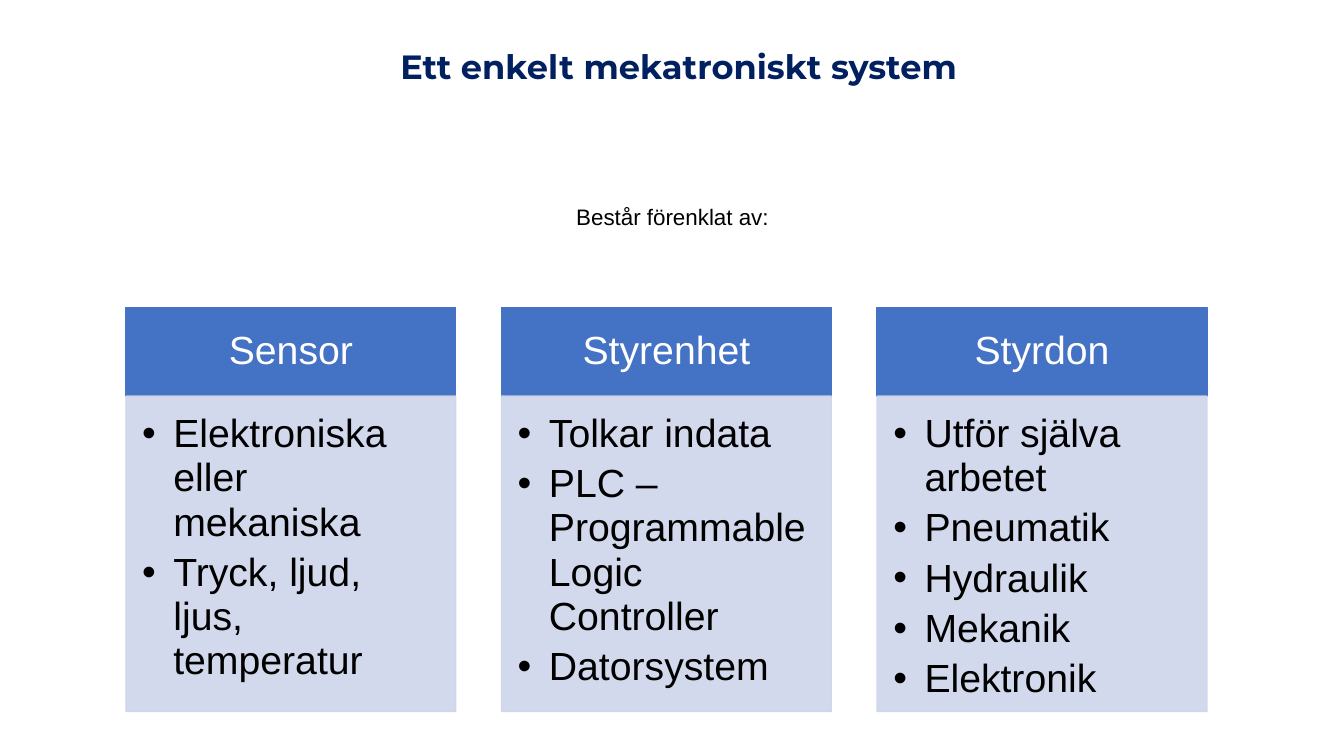
from dataclasses import dataclass

from lxml import etree
from pptx import Presentation
from pptx.dml.color import RGBColor
from pptx.enum.shapes import MSO_SHAPE
from pptx.enum.text import MSO_ANCHOR, MSO_AUTO_SIZE, PP_ALIGN
from pptx.oxml.ns import qn
from pptx.util import Inches, Pt

RECTANGLE = MSO_SHAPE.RECTANGLE
LEFT, CENTER = PP_ALIGN.LEFT, PP_ALIGN.CENTER
TOP, MIDDLE = MSO_ANCHOR.TOP, MSO_ANCHOR.MIDDLE
NO_AUTOFIT = MSO_AUTO_SIZE.NONE

COLORS = {
    "title": "002060",
    "header": "4472C4",
    "body": "CFD5EA",
    "light": "FFFFFF",
    "dark": "000000",
}

# Grid of the three parts, in inches
FIRST_COLUMN = 1.25
COLUMN_STEP = 3.725
COLUMN_WIDTH = 3.27
HEADER_TOP, HEADER_HEIGHT = 3.05, 0.88
BODY_TOP, BODY_HEIGHT = HEADER_TOP + HEADER_HEIGHT, 3.13
BULLET_INDENT = 0.31
BODY_OPACITY = 90


@dataclass(frozen=True)
class SystemPart:
    name: str
    features: tuple[str, ...]


@dataclass(frozen=True)
class TextStyle:
    size: float
    color: str
    font: str = "Arial"
    bold: bool = False
    align: PP_ALIGN = LEFT
    anchor: MSO_ANCHOR = TOP
    line_spacing: float = 0.9
    space_after: float = 0
    insets: tuple[float, float, float, float] = (0.1, 0.05, 0.1, 0.05)
    bulleted: bool = False


TITLE = TextStyle(24, "title", font="Montserrat", bold=True, anchor=MIDDLE)
INTRO = TextStyle(16, "dark", align=CENTER)
HEADER = TextStyle(28, "light", align=CENTER, anchor=MIDDLE,
                   insets=(0.22, 0.12, 0.22, 0.12))
FEATURES = TextStyle(28, "dark", line_spacing=0.94, space_after=4.2,
                     insets=(0.16, 0.16, 0.22, 0.24), bulleted=True)

PARTS = (
    SystemPart("Sensor", ("Elektroniska eller mekaniska",
                          "Tryck, ljud, ljus, temperatur")),
    SystemPart("Styrenhet", ("Tolkar indata",
                             "PLC – Programmable Logic Controller",
                             "Datorsystem")),
    SystemPart("Styrdon", ("Utför själva arbetet", "Pneumatik", "Hydraulik",
                           "Mekanik", "Elektronik")),
)


def apply_format(target, values: dict) -> None:
    for attribute, value in values.items():
        setattr(target, attribute, value)


def add_bullet(paragraph) -> None:
    properties = paragraph._p.get_or_add_pPr()
    indent = Inches(BULLET_INDENT)
    properties.set("marL", str(indent))
    properties.set("indent", str(-indent))
    etree.SubElement(properties, qn("a:buFont")).set("typeface", "Arial")
    etree.SubElement(properties, qn("a:buChar")).set("char", "•")


def write_text(shape, lines: tuple[str, ...], style: TextStyle) -> None:
    frame = shape.text_frame
    left, top, right, bottom = map(Inches, style.insets)
    apply_format(frame, {
        "text": "\n".join(lines), "word_wrap": True, "auto_size": NO_AUTOFIT,
        "vertical_anchor": style.anchor,
        "margin_left": left, "margin_top": top,
        "margin_right": right, "margin_bottom": bottom,
    })
    for paragraph in frame.paragraphs:
        if style.bulleted:
            add_bullet(paragraph)
        apply_format(paragraph, {
            "alignment": style.align, "line_spacing": style.line_spacing,
            "space_before": Pt(0), "space_after": Pt(style.space_after),
        })
        for run in paragraph.runs:
            apply_format(run.font, {"name": style.font, "size": Pt(style.size),
                                    "bold": style.bold})
            run.font.color.rgb = RGBColor.from_string(COLORS[style.color])


def add_panel(slide, column: int, top: float, height: float, color: str,
              opacity: int = 100):
    left = FIRST_COLUMN + column * COLUMN_STEP
    panel = slide.shapes.add_shape(
        RECTANGLE, Inches(left), Inches(top),
        Inches(COLUMN_WIDTH), Inches(height))
    panel.shadow.inherit = False
    panel.line.width = Pt(1)
    panel.fill.solid()
    for paint in (panel.fill.fore_color, panel.line.color):
        paint.rgb = RGBColor.from_string(COLORS[color])
    if opacity < 100:
        for tint in panel._element.spPr.iter(qn("a:srgbClr")):
            etree.SubElement(tint, qn("a:alpha")).set("val", str(opacity * 1000))
    return panel


def add_system_part(slide, column: int, part: SystemPart) -> None:
    header = add_panel(slide, column, HEADER_TOP, HEADER_HEIGHT, "header")
    write_text(header, (part.name,), HEADER)
    body = add_panel(slide, column, BODY_TOP, BODY_HEIGHT, "body", BODY_OPACITY)
    write_text(body, part.features, FEATURES)


def main() -> None:
    presentation = Presentation()
    presentation.slide_width = Inches(13.33)
    presentation.slide_height = Inches(7.5)
    slide = presentation.slides.add_slide(presentation.slide_layouts[5])

    title = slide.shapes.title
    apply_format(title, {"left": Inches(3.87), "top": Inches(0.27),
                         "width": Inches(6.36), "height": Inches(0.82)})
    write_text(title, ("Ett enkelt mekatroniskt system",), TITLE)

    intro = slide.shapes.add_textbox(
        Inches(0.92), Inches(2), Inches(11.5), Inches(0.5))
    write_text(intro, ("Består förenklat av:",), INTRO)

    for column, part in enumerate(PARTS):
        add_system_part(slide, column, part)

    presentation.save("out.pptx")


if __name__ == "__main__":
    main()
